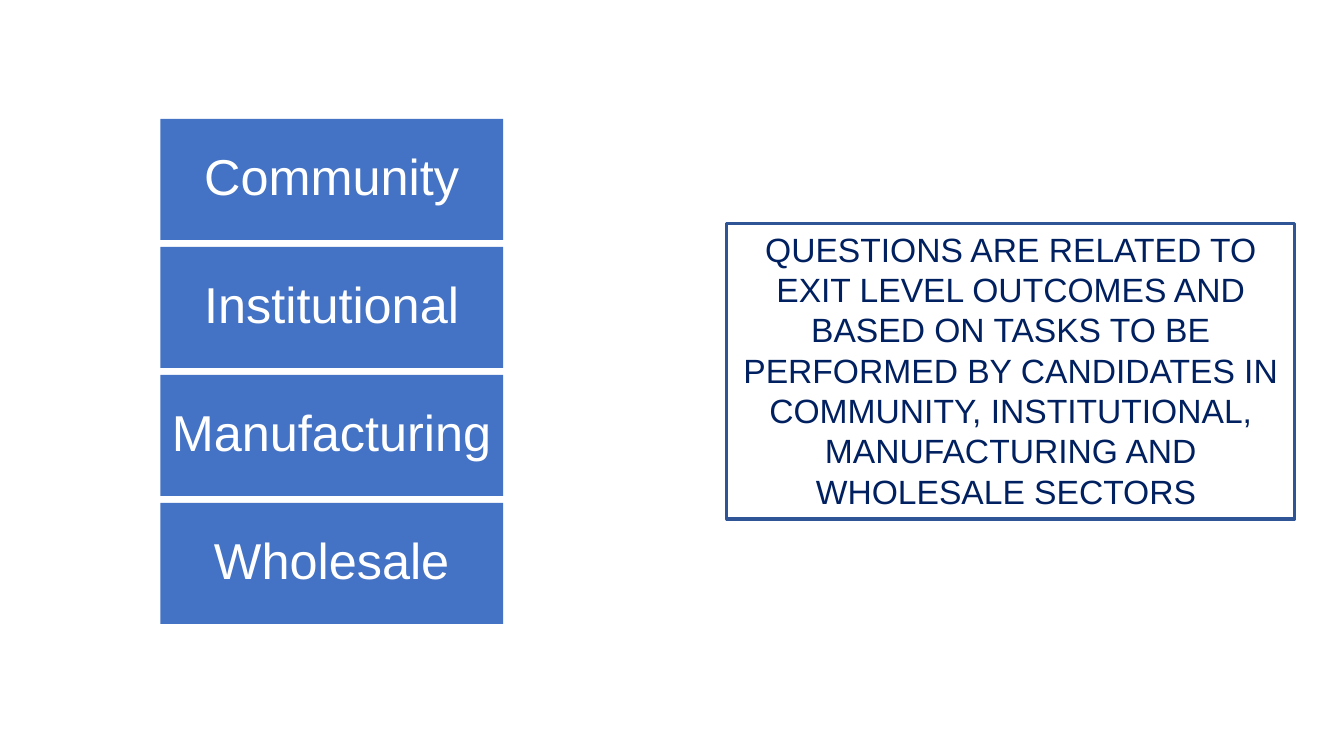
"""Build a slide listing four sectors beside a note on the questions."""
from pptx import Presentation
from pptx.dml.color import RGBColor
from pptx.enum.shapes import MSO_SHAPE
from pptx.enum.text import MSO_ANCHOR, MSO_AUTO_SIZE, PP_ALIGN
from pptx.util import Inches, Pt

BLUE = RGBColor(0x44, 0x72, 0xC4)
DARK_BLUE = RGBColor(0x2F, 0x55, 0x97)
NAVY = RGBColor(0x00, 0x20, 0x60)
WHITE = RGBColor(0xFF, 0xFF, 0xFF)

SECTORS = ["Community", "Institutional", "Manufacturing", "Wholesale"]
SECTOR_TOP = 1.18
SECTOR_STEP = 1.27
NOTE = (
    "QUESTIONS ARE RELATED TO EXIT LEVEL OUTCOMES AND BASED ON TASKS "
    "TO BE PERFORMED BY CANDIDATES IN COMMUNITY, INSTITUTIONAL, "
    "MANUFACTURING AND WHOLESALE SECTORS "
)


def add_box(slide, left, top, width, height, text, size, color):
    box = slide.shapes.add_shape(
        MSO_SHAPE.RECTANGLE, Inches(left), Inches(top), Inches(width), Inches(height)
    )
    box.shadow.inherit = False
    frame = box.text_frame
    frame.word_wrap = True
    frame.vertical_anchor = MSO_ANCHOR.MIDDLE
    para = frame.paragraphs[0]
    para.alignment = PP_ALIGN.CENTER
    span = para.add_run()
    span.text = text
    span.font.name = "Arial"
    span.font.size = Pt(size)
    span.font.color.rgb = color
    return box


deck = Presentation()
deck.slide_width = Inches(13.33)
deck.slide_height = Inches(7.5)
page = deck.slides.add_slide(deck.slide_layouts[6])

for index, sector in enumerate(SECTORS):
    top = SECTOR_TOP + index * SECTOR_STEP
    sector_box = add_box(page, 1.59, top, 3.4, 1.2, sector, 36, WHITE)
    sector_box.fill.solid()
    sector_box.fill.fore_color.rgb = BLUE
    sector_box.line.fill.background()
    frame = sector_box.text_frame
    frame.margin_left = frame.margin_right = Inches(0.1)
    frame.margin_top = frame.margin_bottom = Inches(0.1)
    frame.paragraphs[0].line_spacing = 0.9

note_box = add_box(page, 7.21, 2.22, 5.63, 2.93, NOTE, 24, NAVY)
note_box.fill.background()
note_box.line.color.rgb = DARK_BLUE
note_box.line.width = Pt(2.25)
note_box.text_frame.vertical_anchor = MSO_ANCHOR.TOP
note_box.text_frame.auto_size = MSO_AUTO_SIZE.SHAPE_TO_FIT_TEXT

deck.save("out.pptx")
